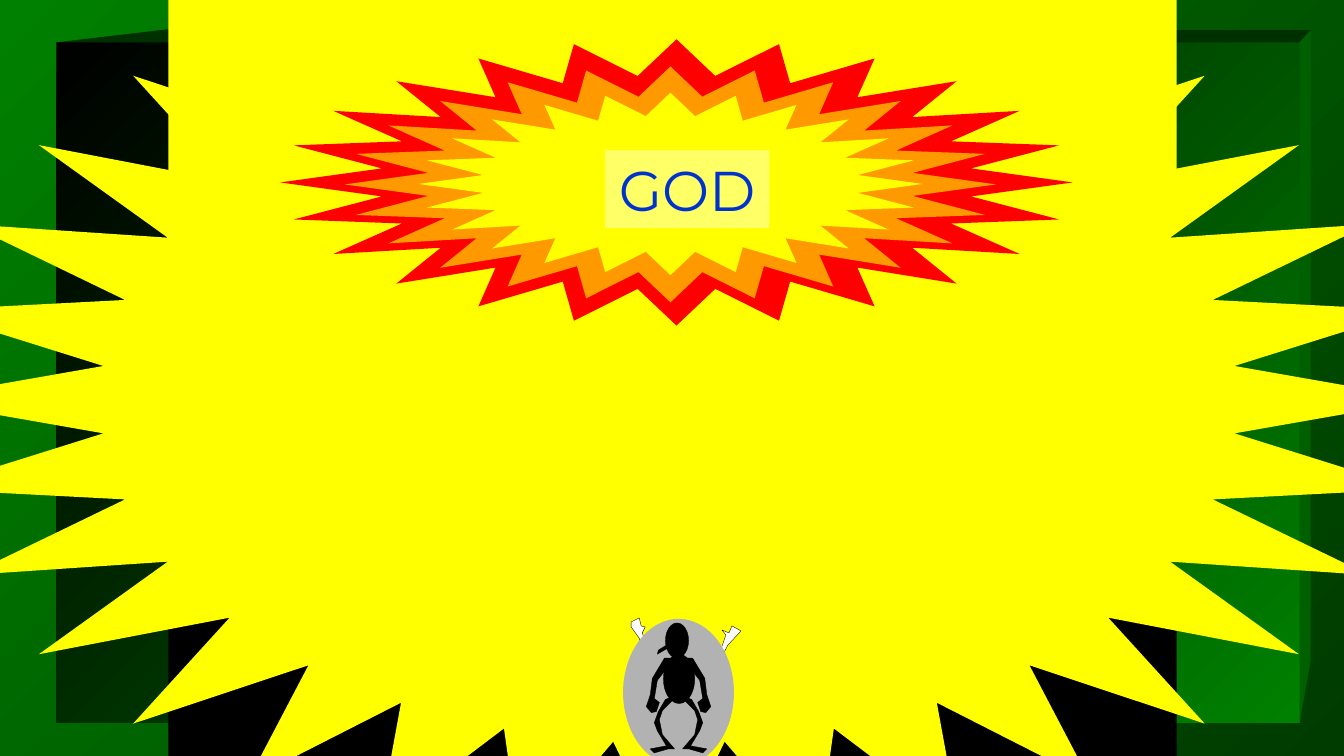
import dataclasses

import pptx
import pptx.dml.color
import pptx.enum.shapes
import pptx.enum.text
import pptx.util

Inches = pptx.util.Inches
Preset = pptx.enum.shapes.MSO_SHAPE


@dataclasses.dataclass(frozen=True)
class Theme:
    green: str = "008000"
    dark_green: str = "003B00"
    bevel_top: str = "003000"
    bevel_side: str = "006000"
    black: str = "000000"
    white: str = "FFFFFF"
    yellow: str = "FFFF00"
    pale_yellow: str = "FFFF66"
    red: str = "FF0000"
    orange: str = "FF9900"
    grey: str = "B2B2B2"
    blue: str = "0033CC"
    font: str = "Montserrat"
    title_size: int = 40
    hairline: float = 0.25


theme = Theme()
rgb = pptx.dml.color.RGBColor.from_string


def add_part(shapes, fill, geometry, preset=None, outlined=False):
    """Add a preset in a box of inches, or a polygon of points in hundredths of an inch."""
    if preset is None:
        builder = shapes.build_freeform(*geometry[0], scale=Inches(0.01))
        builder.add_line_segments(geometry[1:], close=True)
        part = builder.convert_to_shape()
    else:
        part = shapes.add_shape(preset, *map(Inches, geometry))
    part.shadow.inherit = False
    part.fill.solid()
    part.fill.fore_color.rgb = rgb(fill)
    if outlined:
        part.line.color.rgb = rgb(theme.black)
        part.line.width = pptx.util.Pt(theme.hairline)
    else:
        part.line.fill.background()
    return part


def write_text(frame, text, *, font, size, colour, align):
    para = frame.paragraphs[0]
    para.alignment = align
    span = para.add_run()
    span.text = text
    span.font.name = font
    span.font.size = pptx.util.Pt(size)
    span.font.color.rgb = rgb(colour)


deck = pptx.Presentation()
deck.slide_width, deck.slide_height = Inches(13.33), Inches(7.5)
page = deck.slides.add_slide(deck.slide_layouts[5])

# Green backdrop with its bevelled panel
panel = add_part(page.shapes, theme.black, (0.56, 0.42, 12.33, 6.75), Preset.RECTANGLE)
for fill, colours in (
    (page.background.fill, (theme.green, theme.dark_green)),
    (panel.fill, (theme.black, theme.green)),
):
    fill.gradient()
    fill.gradient_angle = 315
    for stop, colour in zip(fill.gradient_stops, colours):
        stop.color.rgb = rgb(colour)

add_part(page.shapes, theme.bevel_top, [(56, 42), (167, 29), (1300, 30), (1289, 42)])
add_part(page.shapes, theme.bevel_side, [(1289, 42), (1300, 30), (1300, 655), (1289, 717)])

# Ground, sky and the great sunburst
for preset, colour, box in (
    (Preset.RECTANGLE, theme.black, (1.67, 6.02, 10, 1.48)),
    (Preset.RECTANGLE, theme.yellow, (1.67, 0, 10, 1.83)),
    (Preset.STAR_32_POINT, theme.yellow, (-0.88, -0.58, 15.03, 9.09)),
):
    add_part(page.shapes, colour, box, preset)

# Raised white arms, partly behind the grey oval
raised_arms = page.shapes.add_group_shape()
for points in (
    [(683, 667), (704, 659), (714, 655), (722, 640), (735, 626), (726, 621),
     (723, 628), (716, 625), (720, 630), (714, 647), (703, 657)],
    [(663, 668), (638, 645), (634, 633), (626, 622), (626, 617), (634, 613),
     (636, 621), (640, 622), (637, 628), (645, 647), (662, 661)],
):
    add_part(raised_arms.shapes, theme.white, points, outlined=True)

# Nested burst around the title
burst = page.shapes.add_group_shape()
for preset, colour, box in (
    (Preset.STAR_32_POINT, theme.yellow, (1.67, 0, 10, 3.61)),
    (Preset.STAR_24_POINT, theme.red, (2.78, 0.39, 7.86, 2.84)),
    (Preset.STAR_24_POINT, theme.orange, (3.42, 0.66, 6.46, 2.34)),
    (Preset.STAR_24_POINT, theme.yellow, (4.15, 0.92, 5, 1.81)),
):
    add_part(burst.shapes, colour, box, preset)

title = page.shapes.title
page.shapes.element.append(title.element)  # bring in front of the burst
title.left, title.top, title.width, title.height = map(Inches, (6, 1.49, 1.63, 0.77))
title.fill.solid()
title.fill.fore_color.rgb = rgb(theme.pale_yellow)
title.text_frame.word_wrap = False
title.text_frame.auto_size = pptx.enum.text.MSO_AUTO_SIZE.NONE
title.text_frame.vertical_anchor = pptx.enum.text.MSO_ANCHOR.MIDDLE
write_text(title.text_frame, "GOD", font=theme.font, size=theme.title_size,
           colour=theme.blue, align=pptx.enum.text.PP_ALIGN.CENTER)

# Black figure on the grey oval
figure = page.shapes.add_group_shape()
for colour, box in (
    (theme.grey, (6.18, 6.14, 1.1, 1.46)),
    (theme.black, (6.6, 6.18, 0.23, 0.35)),
    (theme.black, (6.58, 6.49, 0.31, 0.49)),
):
    add_part(figure.shapes, colour, box, Preset.OVAL, outlined=colour == theme.black)

pipe = [(664, 638), (653, 645), (652, 649), (664, 642)]
add_part(figure.shapes, theme.black, pipe, outlined=True)

# Each limb is drawn on the left and mirrored to the right
mirror_sum = 1346
left_arm = [(666, 653), (659, 653), (647, 673), (645, 689), (641, 701), (646, 707),
            (651, 706), (654, 697), (649, 693), (652, 675), (663, 661)]
left_leg = [(667, 691), (660, 694), (653, 706), (649, 717), (652, 725), (661, 740),
            (645, 743), (649, 747), (663, 743), (669, 743), (657, 729), (654, 714),
            (657, 705), (668, 694)]
for limb in (left_arm, left_leg):
    mirrored = [(mirror_sum - x, y) for x, y in limb]
    for points in (limb, mirrored):
        add_part(figure.shapes, theme.black, points, outlined=True)

deck.save("out.pptx")
